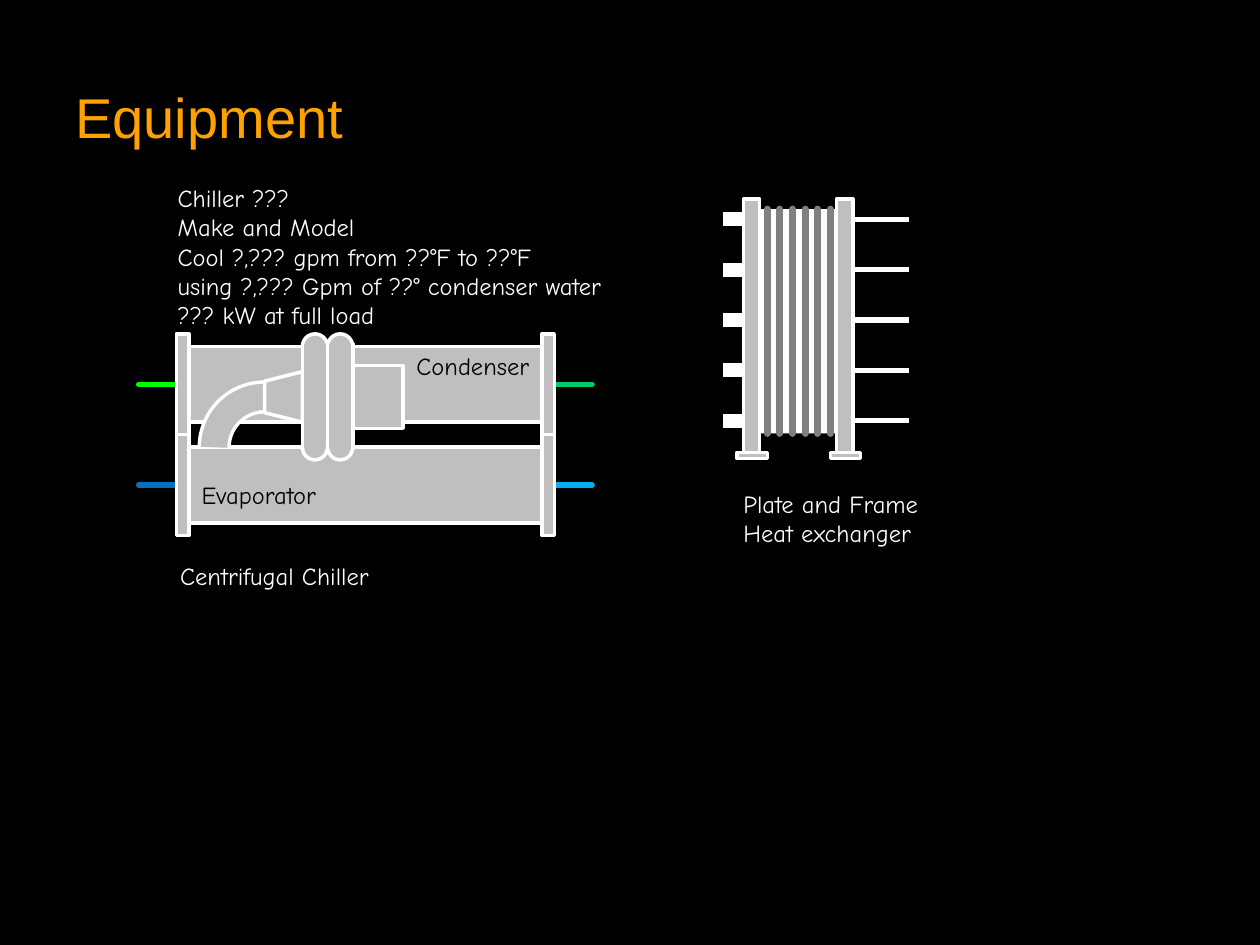
"""Build the equipment slide with a centrifugal chiller and a heat exchanger."""
from lxml.etree import SubElement
from pptx import Presentation
from pptx.dml.color import RGBColor
from pptx.enum.shapes import MSO_CONNECTOR, MSO_SHAPE
from pptx.enum.text import MSO_ANCHOR, PP_ALIGN
from pptx.oxml.ns import qn
from pptx.util import Inches, Pt

COLORS = {
    "black": "000000", "white": "FFFFFF", "orange": "FFA100",
    "metal": "BFBFBF", "plate": "808080",
    "evaporator_in": "0070C0", "evaporator_out": "00B0F0",
    "condenser_in": "00FF00", "condenser_out": "00CC66",
}
UNIT = 0.1
COLUMNS, ROWS = 100, 75

TITLE = ["Equipment"]
CHILLER_NOTES = [
    "Chiller ???",
    "Make and Model",
    "Cool ?,??? gpm from ??°F to ??°F using ?,??? Gpm of ??° condenser water",
    "??? kW at full load",
]
CHILLER_LABELS = [
    (["Evaporator"], (16, 38.1, 15, 2.4), "black", PP_ALIGN.LEFT),
    (["Condenser"], (27, 27.8, 15, 2.4), "black", PP_ALIGN.RIGHT),
    (["Centrifugal Chiller"], (14.3, 44.5, 25.7, 2.4), "white", PP_ALIGN.LEFT),
]
EXCHANGER_LABEL = ["Plate and Frame Heat exchanger"]
VESSELS = [
    (26.5, "condenser_in", "condenser_out"),
    (34.5, "evaporator_in", "evaporator_out"),
]
BEND_STROKES = [("white", 19), ("metal", 15)]
CASING_LEFTS = [24, 26]
PIPE_ROWS = [17.4 + 4 * index for index in range(5)]
PLATE_COLUMNS = [60.9 + index for index in range(6)]
FRAME_LEFTS = [66.4, 59]


def grid(*cells):
    return [Inches(round(cell * UNIT, 3)) for cell in cells]


def rgb(name):
    return RGBColor.from_string(COLORS[name])


def add_text(shapes, lines, area, color="white", size=14, font="Comic Neue",
             align=PP_ALIGN.LEFT, anchor=MSO_ANCHOR.MIDDLE, inset=0):
    frame = shapes.add_textbox(*grid(*area)).text_frame
    frame.word_wrap = True
    frame.vertical_anchor = anchor
    frame.margin_left = frame.margin_right = Inches(inset)
    frame.margin_top = frame.margin_bottom = Inches(inset / 2)
    frame.text = "\n".join(lines)
    for para in frame.paragraphs:
        para.alignment = align
        para.font.name = font
        para.font.size = Pt(size)
        para.font.color.rgb = rgb(color)


def add_part(shapes, area, kind=MSO_SHAPE.RECTANGLE, fill="metal",
             line="white", width=2, rotation=0):
    part = shapes.add_shape(kind, *grid(*area))
    part.shadow.inherit = False
    part.rotation = rotation
    if fill:
        part.fill.solid()
        part.fill.fore_color.rgb = rgb(fill)
    else:
        part.fill.background()
    if line:
        part.line.color.rgb = rgb(line)
        part.line.width = Pt(width)
        SubElement(part.line._get_or_add_ln(), qn("a:round"))
    else:
        part.line.fill.background()


def add_line(shapes, start, end, color="white", width=2, cap="rnd"):
    line = shapes.add_connector(MSO_CONNECTOR.STRAIGHT, *grid(*start, *end))
    line.line.color.rgb = rgb(color)
    line.line.width = Pt(width)
    line.line._get_or_add_ln().set("cap", cap)
    SubElement(line._element.spPr, qn("a:effectLst"))


def draw_chiller(shapes):
    for top, color_in, color_out in VESSELS:
        for left, color in ((11, color_in), (44, color_out)):
            add_line(shapes, (left, top + 4), (left + 3, top + 4), color, 3)
    add_text(shapes, CHILLER_NOTES, (14.1, 14.5, 36.9, 14.1),
             anchor=MSO_ANCHOR.TOP)
    for top, *_ in VESSELS:
        add_part(shapes, (14, top, 1, 8))
        add_part(shapes, (15, top + 1, 28, 6))
        add_part(shapes, (43, top, 1, 8))
    for color, width in BEND_STROKES:
        add_part(shapes, (17, 31.5, 8, 8), MSO_SHAPE.ARC, None, color, width, 270)
    add_part(shapes, (20.5, 30, 4, 3), MSO_SHAPE.TRAPEZOID, rotation=270)
    add_part(shapes, (28, 29, 4, 5))
    for lines, area, color, align in CHILLER_LABELS:
        add_text(shapes, lines, area, color, align=align)
    for left in CASING_LEFTS:
        for top in (26.5, 34.5):
            add_part(shapes, (left, top, 2, 2), MSO_SHAPE.OVAL)
        add_part(shapes, (left, 27.3, 2, 8.2), line=None)
    for column in (*CASING_LEFTS, 28):
        add_line(shapes, (column, 27.3), (column, 35.6))


def draw_exchanger(shapes):
    add_part(shapes, (60.2, 16.6, 6.4, 17.8), fill="white", line=None)
    for row in PIPE_ROWS:
        add_line(shapes, (57.9, row), (71.9, row), width=3, cap="sq")
        add_line(shapes, (57.9, row), (58.4, row), width=8, cap="sq")
    for column in PLATE_COLUMNS:
        add_line(shapes, (column, 34.4), (column, 16.6), "plate", 4)
    for left in FRAME_LEFTS:
        add_part(shapes, (left, 15.8, 1.3, 20.6))
        add_part(shapes, (left - 0.5, 35.9, 2.4, 0.5))


def main():
    deck = Presentation()
    deck.slide_width, deck.slide_height = grid(COLUMNS, ROWS)
    page = deck.slides.add_slide(deck.slide_layouts[6])
    page.background.fill.solid()
    page.background.fill.fore_color.rgb = rgb("black")
    add_text(page.shapes, TITLE, (5, 3, 90, 12.5), "orange", 32, "Arial",
             inset=0.1)
    draw_chiller(page.shapes.add_group_shape().shapes)
    add_text(page.shapes, EXCHANGER_LABEL, (59, 38.8, 15, 4.7))
    draw_exchanger(page.shapes.add_group_shape().shapes)
    deck.save("out.pptx")


if __name__ == "__main__":
    main()
